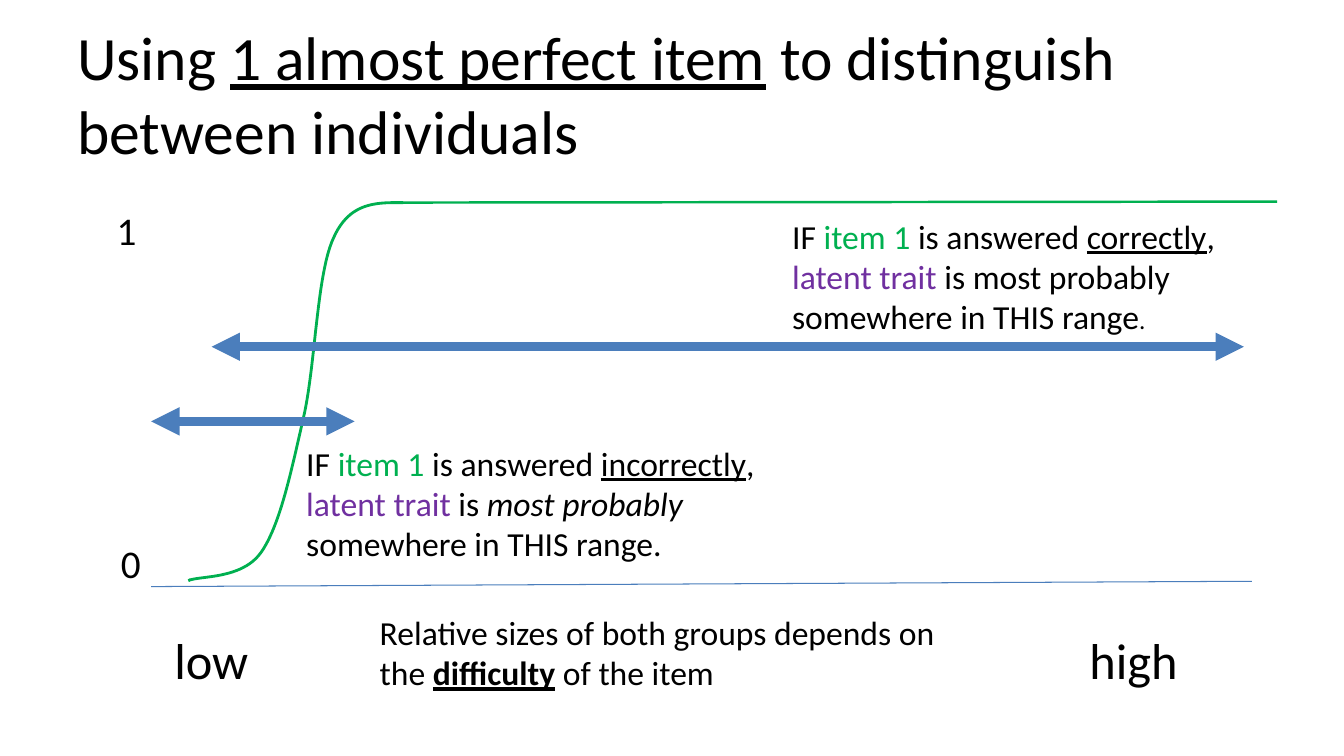
import pptx
import pptx.dml.color
import pptx.enum.shapes
import pptx.enum.text
import pptx.oxml.xmlchemy
import pptx.util

Pt = pptx.util.Pt
RGB = pptx.dml.color.RGBColor
BLACK = RGB(0x00, 0x00, 0x00)
BLUE = RGB(0x4B, 0x7E, 0xBC)
GREEN = RGB(0x00, 0xB0, 0x50)
PURPLE = RGB(0x70, 0x30, 0xA0)


class SlideWriter:
    """Holds the text style and the slide being filled."""

    font = "Calibri"

    def __init__(self, slide):
        self.slide = slide

    def text(self, box, paragraphs, size, **frame_format):
        """Each paragraph is a list of (text, format) runs."""
        frame = self.slide.shapes.add_textbox(*map(Pt, box)).text_frame
        for name, value in frame_format.items():
            setattr(frame, name, value)
        for index, runs in enumerate(paragraphs):
            paragraph = frame.add_paragraph() if index else frame.paragraphs[0]
            for words, changes in runs:
                run = paragraph.add_run()
                run.text = words
                style = {"name": self.font, "size": Pt(size), "color": BLACK, **changes}
                run.font.color.rgb = style.pop("color")
                for name, value in style.items():
                    setattr(run.font, name, value)

    def label(self, box, paragraphs, size):
        self.text(box, paragraphs, size, word_wrap=False,
                  auto_size=pptx.enum.text.MSO_AUTO_SIZE.SHAPE_TO_FIT_TEXT)

    def line(self, start, end, color, width, arrows=False):
        connector = self.slide.shapes.add_connector(
            pptx.enum.shapes.MSO_CONNECTOR.STRAIGHT, *map(Pt, start + end))
        connector.line.color.rgb = color
        connector.line.width = Pt(width)
        properties = connector._element.spPr
        if arrows:
            outline = properties.get_or_add_ln()
            for tag in ("a:headEnd", "a:tailEnd"):
                tip = pptx.oxml.xmlchemy.OxmlElement(tag)
                tip.set("type", "triangle")
                outline.append(tip)
        properties.append(pptx.oxml.xmlchemy.OxmlElement("a:effectLst"))

    def curve(self, start, beziers, color, width, steps=24):
        """Draws joined cubic Bézier pieces as fine line segments."""
        points, origin = [], start
        for control_1, control_2, end in beziers:
            for step in range(1, steps + 1):
                t = step / steps
                weights = ((1 - t) ** 3, 3 * t * (1 - t) ** 2, 3 * t * t * (1 - t), t ** 3)
                points.append(tuple(
                    Pt(sum(w * v for w, v in zip(weights, values)))
                    for values in zip(origin, control_1, control_2, end)))
            origin = end
        builder = self.slide.shapes.build_freeform(*map(Pt, start))
        builder.add_line_segments(points, close=False)
        shape = builder.convert_to_shape()
        shape.shadow.inherit = False
        shape.fill.background()
        shape.line.color.rgb = color
        shape.line.width = Pt(width)


def main():
    deck = pptx.Presentation()
    deck.slide_width, deck.slide_height = Pt(960), Pt(540)
    writer = SlideWriter(deck.slides.add_slide(deck.slide_layouts[6]))
    plain, underlined = {}, {"underline": True}
    item, trait = ("item 1", {"color": GREEN}), ("latent trait ", {"color": PURPLE})

    # Title
    writer.text((48, 21.6, 864, 90),
                [[("Using ", plain), ("1 almost perfect item", underlined),
                  (" to distinguish between individuals", plain)]],
                44, word_wrap=True,
                vertical_anchor=pptx.enum.text.MSO_ANCHOR.MIDDLE)

    # Latent trait axis and its labels
    writer.line((108, 419), (894.2, 415.2), BLUE, 0.75)
    for words, box, size in (
            ("low", (117.4, 445.7, 67.7, 51), 36),
            ("high", (771.1, 445.7, 78.5, 51), 36),
            ("0", (79.2, 381.6, 28.8, 41), 28),
            ("1", (76.3, 144, 28.8, 41), 28)):
        writer.label(box, [[(words, plain)]], size)

    # Item response curve
    foot, shoulder = (134.6, 414.7), (288, 144.7)
    writer.curve(shoulder, [
        ((269.3, 144.7), (249.8, 144), (238.3, 169.9)),
        ((226.1, 195.8), (225.4, 262.1), (216.7, 298.8)),
        ((208.1, 336.2), (200.2, 375.1), (186.5, 394.6)),
        ((172.8, 414), (142.6, 411.1), foot)], GREEN, 2)
    writer.line(shoulder, (912.2, 144), GREEN, 1.75)
    writer.line(foot, (136.1, 414), GREEN, 1.75)

    # Ranges for a correct and an incorrect answer
    writer.label((558.7, 150.5, 317.5, 94.3), [
        [("IF ", plain), item, (" is answered ", plain),
         ("correctly", underlined), (",", plain)],
        [trait, ("is most probably", plain)],
        [("somewhere in THIS range", plain), (".", {"size": Pt(18)})]], 24)
    writer.line((151.2, 247.7), (888.5, 247.7), BLUE, 6.75, arrows=True)
    writer.label((211.7, 312.5, 335.5, 94.3), [
        [("IF ", plain), item, (" is answered ", plain),
         ("incorrectly", underlined), (",", plain)],
        [trait, ("is ", plain), ("most probably", {"italic": True})],
        [("somewhere in THIS range.", plain)]], 24)
    writer.line((108, 301), (253.4, 301), BLUE, 6.75, arrows=True)

    # Remark on difficulty
    writer.label((264.2, 433.4, 414.7, 65.5), [
        [("Relative sizes of both groups depends on", plain)],
        [("the ", plain), ("difficulty", {"bold": True, "underline": True}),
         (" of the item", plain)]], 24)

    deck.save("out.pptx")


if __name__ == "__main__":
    main()
